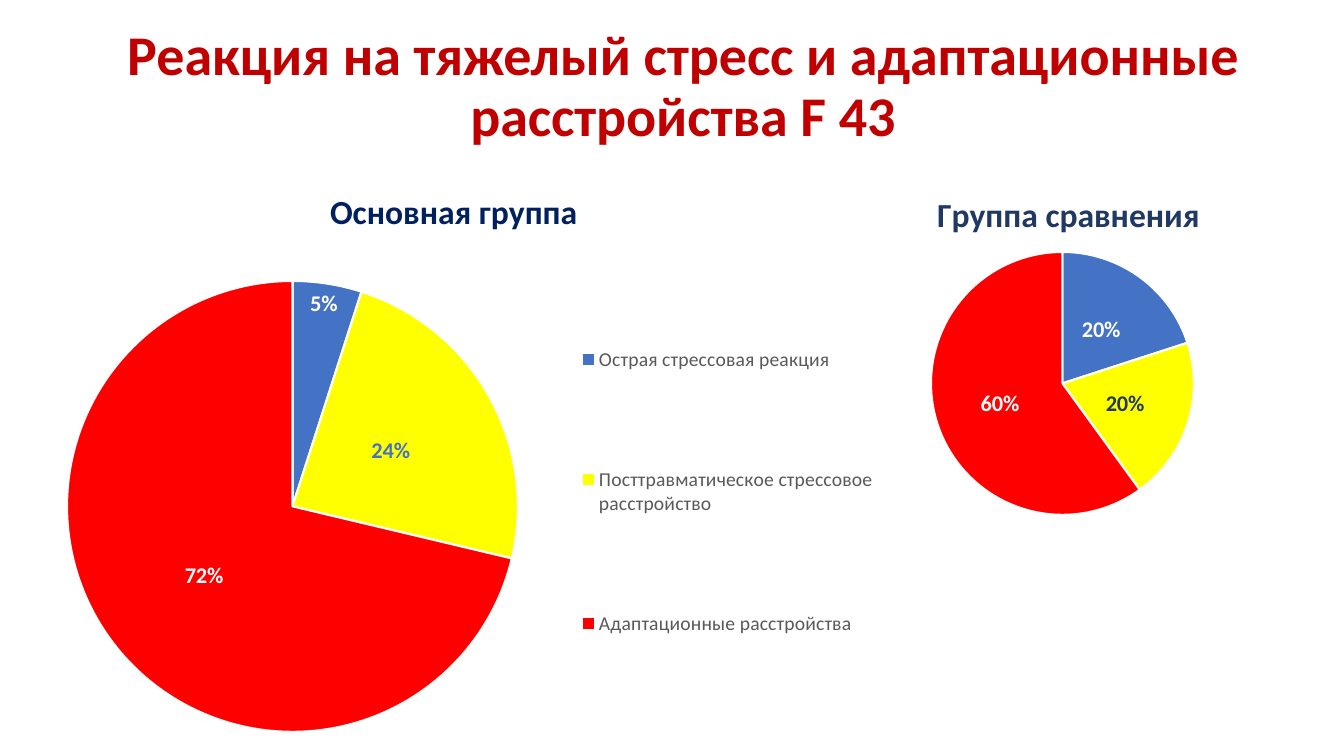
from dataclasses import dataclass

from lxml.etree import SubElement
from pptx import Presentation
from pptx.chart.data import CategoryChartData
from pptx.dml.color import RGBColor
from pptx.enum.chart import XL_CHART_TYPE as Chart, XL_LABEL_POSITION as LabelPos, XL_LEGEND_POSITION as LegendPos
from pptx.enum.text import MSO_ANCHOR as Anchor, PP_ALIGN as Align
from pptx.oxml import parse_xml
from pptx.oxml.ns import nsdecls, qn
from pptx.util import Emu, Pt

TITLE = "Реакция на тяжелый стресс и адаптационные расстройства F 43"
TITLE_BOX = (11, 15, 1344, 146)
DISORDERS = ["Острая стрессовая реакция", "Посттравматическое стрессовое расстройство", "Адаптационные расстройства"]
GROUPS = [
    dict(title="Основная группа", title_color="002060", cats=DISORDERS, values=(5, 24, 72),
         box=(0, 155, 895, 592), title_at=(324, 183), pie=(67, 281, 451, 451),
         legend=(578, 252, 300, 479), labels={0: ("FFFFFF", (14, -91)), 1: ("4472C4", None)}),
    dict(title="Группа сравнения", title_color="203864", cats=["1", "2", "3"], values=(20, 20, 60),
         box=(810, 163, 504, 367), title_at=(931, 186), pie=(931, 252, 263, 263),
         legend=None, labels={1: ("203864", None)}),
]


@dataclass(frozen=True)
class Theme:
    font: str = "Calibri"
    heading: str = "C00000"
    legend: str = "595959"
    white: str = "FFFFFF"
    slices: tuple = ("4472C4", "FFFF00", "FF0000")
    heading_size: int = 40
    title_size: int = 24
    label_size: int = 16
    legend_size: int = 14
    slice_line: float = 1.5
    percent: str = '0"%"'


T = Theme()
SCALE = 914400 / 100.8


def px(n):
    return Emu(round(n * SCALE))


def style(font, size, color, bold=False):
    font.name, font.size, font.bold = T.font, Pt(size), bold
    font.color.rgb = RGBColor.from_string(color)


def make_layout(pairs, inner=False):
    layout = parse_xml(f"<c:layout {nsdecls('c')}><c:manualLayout/></c:layout>")
    if inner:
        SubElement(layout[0], qn("c:layoutTarget")).set("val", "inner")
    for tag, val in pairs:
        SubElement(layout[0], qn(f"c:{tag}")).set("val", str(val))
    return layout


def place(parent, after, chart_box, area, inner=False):
    for old in parent.findall(qn("c:layout")):
        parent.remove(old)
    left, top, width, height = chart_box
    fractions = ((area[0] - left) / width, (area[1] - top) / height,
                 *(n / d for n, d in zip(area[2:], (width, height))))
    pairs = [("xMode", "edge"), ("yMode", "edge")]
    pairs += [(tag, round(f, 4)) for tag, f in zip("xywh", fractions)]
    index = 0 if after is None else parent.index(parent.find(qn(after))) + 1
    parent.insert(index, make_layout(pairs, inner))


def add_heading(s):
    tf = s.shapes.add_textbox(*map(px, TITLE_BOX)).text_frame
    tf.word_wrap, tf.vertical_anchor = True, Anchor.MIDDLE
    p = tf.paragraphs[0]
    p.alignment, p.line_spacing = Align.CENTER, 0.9
    r = p.add_run()
    r.text = TITLE
    style(r.font, T.heading_size, T.heading, True)


def add_labels(plot, series, group):
    plot.has_data_labels = True
    labels = plot.data_labels
    labels.show_value, labels.position = True, LabelPos.CENTER
    labels.number_format, labels.number_format_is_linked = T.percent, False
    style(labels.font, T.label_size, T.white, True)
    for i, (color, shift) in group["labels"].items():
        label = series.points[i].data_label
        style(label.font, T.label_size, color, True)
        label.position = LabelPos.CENTER
    own = series.data_labels
    own.show_value, own.position = True, LabelPos.CENTER
    own.number_format, own.number_format_is_linked = T.percent, False
    style(own.font, T.label_size, T.white, True)
    for node in own._element.findall(qn("c:dLbl")):
        shift = group["labels"][int(node[0].get("val"))][1]
        fmt = parse_xml(f"<c:numFmt {nsdecls('c')} sourceLinked='0'/>")
        fmt.set("formatCode", T.percent)
        node.insert(1, fmt)
        if shift:
            pairs = [(tag, round(d / n, 4)) for tag, d, n in zip("xy", shift, group["box"][2:])]
            node.insert(1, make_layout(pairs))


def add_pie(s, group):
    data = CategoryChartData()
    data.categories = group["cats"]
    data.add_series("Series 1", group["values"])
    box = group["box"]
    chart = s.shapes.add_chart(Chart.PIE, *map(px, box), data).chart
    chart.font.name = T.font
    chart.has_title = True
    title = chart.chart_title
    r = title.text_frame.paragraphs[0].add_run()
    r.text = group["title"]
    style(r.font, T.title_size, group["title_color"], True)
    place(title._element, "c:tx", box, group["title_at"])

    plot = chart.plots[0]
    plot.vary_by_categories = True
    series = plot.series[0]
    for i, color in enumerate(T.slices):
        fmt = series.points[i].format
        fmt.fill.solid()
        fmt.fill.fore_color.rgb = RGBColor.from_string(color)
        fmt.line.color.rgb = RGBColor.from_string(T.white)
        fmt.line.width = Pt(T.slice_line)
    add_labels(plot, series, group)
    place(chart._chartSpace.chart.plotArea, None, box, group["pie"], True)

    chart.has_legend = group["legend"] is not None
    if chart.has_legend:
        legend = chart.legend
        legend.position, legend.include_in_layout = LegendPos.RIGHT, False
        style(legend.font, T.legend_size, T.legend)
        place(legend._element, "c:legendPos", box, group["legend"])


def main():
    prs = Presentation()
    prs.slide_width, prs.slide_height = px(1344), px(756)
    s = prs.slides.add_slide(prs.slide_layouts[6])
    add_heading(s)
    for group in GROUPS:
        add_pie(s, group)
    prs.save("out.pptx")


if __name__ == "__main__":
    main()
